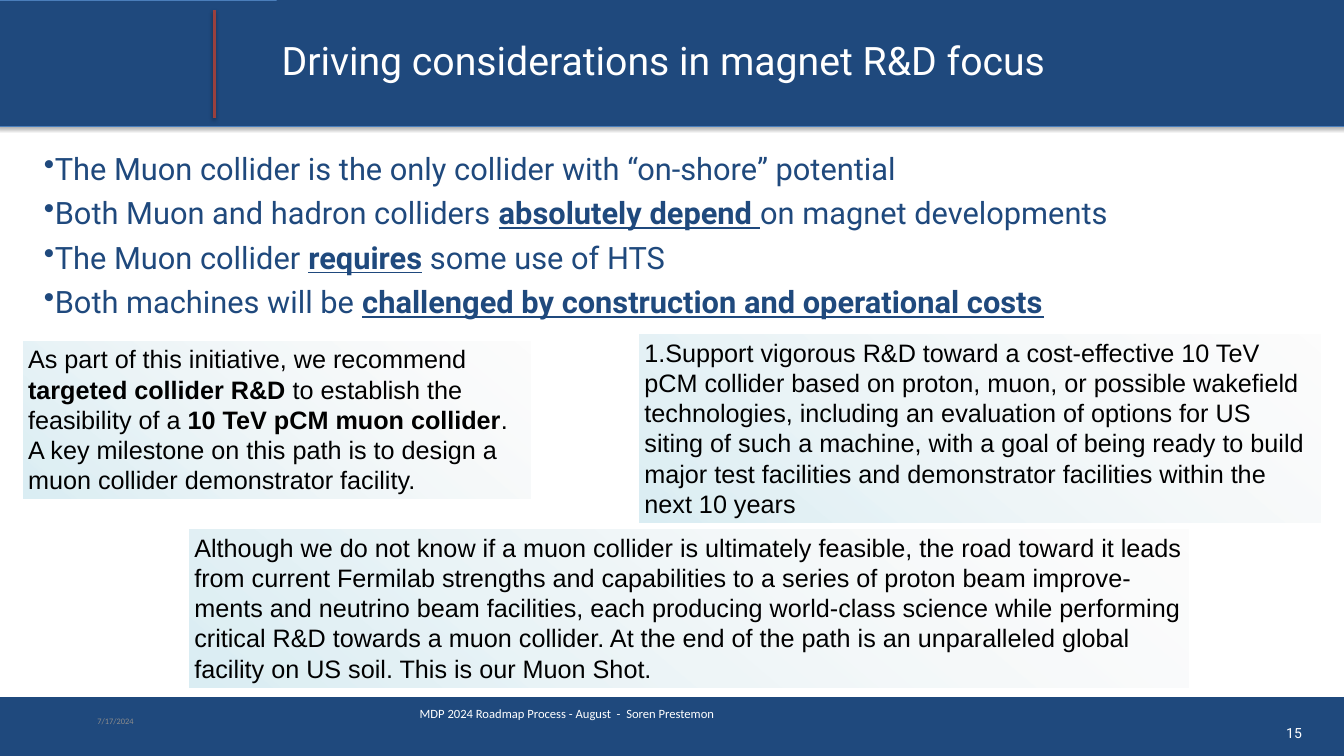
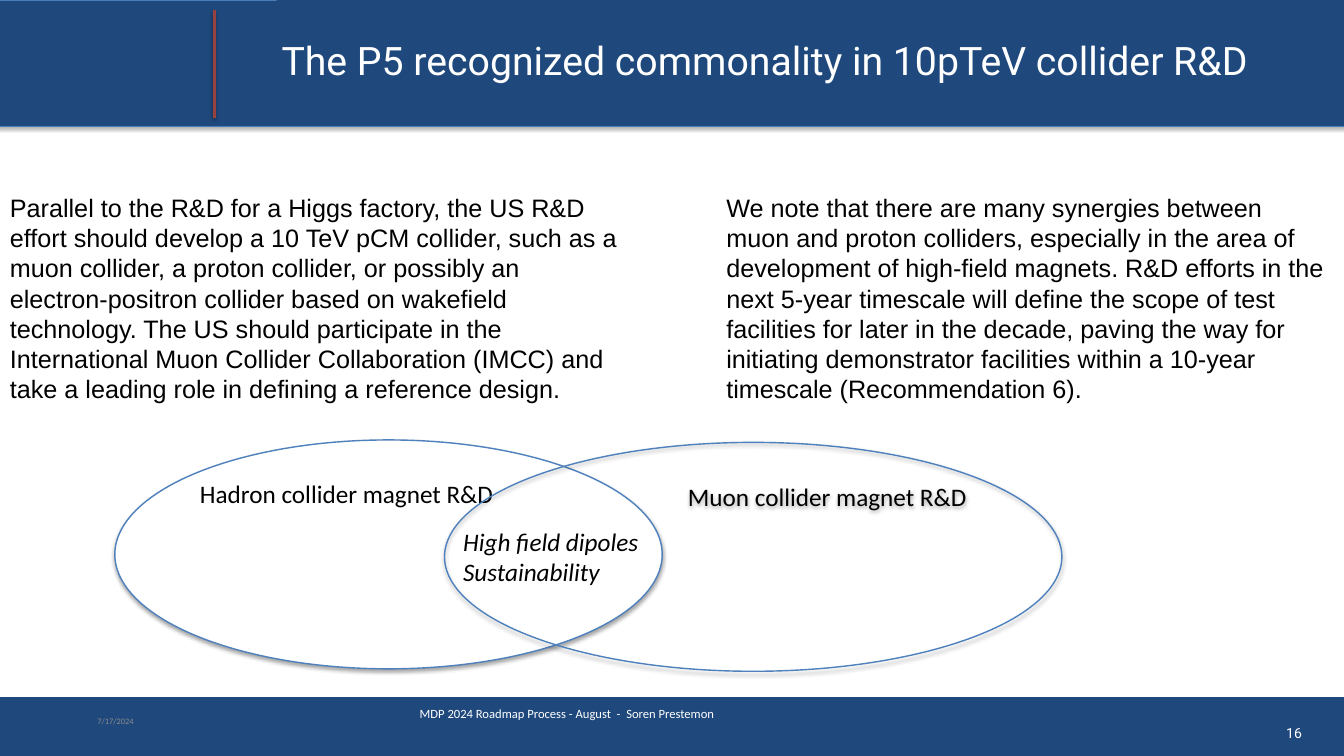
from dataclasses import dataclass

from lxml import etree
from pptx import Presentation
from pptx.dml.color import RGBColor
from pptx.enum import shapes, text
from pptx.oxml import ns
from pptx.util import Pt


@dataclass(frozen=True)
class Theme:
    navy: str = "1F497D"
    band_edge: str = "4A7EBB"
    divider: str = "9A403E"
    ellipse_edge: str = "4F81BD"
    white: str = "FFFFFF"
    black: str = "000000"
    gray: str = "8C8C8C"
    quote_light: str = "F7F7F7"
    quote_blue: str = "DBEEF4"
    heading_font: str = "Roboto"
    quote_font: str = "Arial"
    label_font: str = "Calibri"
    title_size: int = 56
    bullet_size: int = 44
    quote_size: int = 36
    page_size: int = 20
    footer_size: int = 18
    date_size: int = 12


THEME = Theme()
TIGHT = (7.2, 3.6, 7.2, 3.6)
EVEN = (7.2, 7.2, 7.2, 7.2)
TOP = text.MSO_ANCHOR.TOP
MIDDLE = text.MSO_ANCHOR.MIDDLE
LEFT = text.PP_ALIGN.LEFT
RIGHT = text.PP_ALIGN.RIGHT
RECTANGLE = shapes.MSO_SHAPE.RECTANGLE
OVAL = shapes.MSO_SHAPE.OVAL


def rgb(color):
    return RGBColor.from_string(color)


def set_shadow(shape, opacity):
    effects = etree.SubElement(shape.element.spPr, ns.qn("a:effectLst"))
    if opacity:
        shadow = etree.SubElement(
            effects, ns.qn("a:outerShdw"), blurRad=str(Pt(6)), dist=str(Pt(3)),
            dir="5400000", rotWithShape="0")
        color = etree.SubElement(shadow, ns.qn("a:srgbClr"), val=THEME.black)
        etree.SubElement(color, ns.qn("a:alpha"), val=str(opacity * 1000))


def add_panel(slide, kind, box, fill=None, line=None, line_width=1, shadow=0):
    shape = slide.shapes.add_shape(kind, *map(Pt, box))
    if fill:
        shape.fill.solid()
        shape.fill.fore_color.rgb = rgb(fill)
    else:
        shape.fill.background()
    if line:
        shape.line.color.rgb = rgb(line)
        shape.line.width = Pt(line_width)
    else:
        shape.line.fill.background()
    set_shadow(shape, shadow)
    return shape


def add_marker(paragraph, tag, indent=0, **attributes):
    properties = paragraph._p.get_or_add_pPr()
    properties.set("marL", str(Pt(indent)))
    properties.set("indent", str(-Pt(indent)))
    etree.SubElement(properties, ns.qn(tag), **attributes)


def write(shape, lines, font, size, color, inset=TIGHT, anchor=TOP, align=LEFT,
          wrap=True, space=0, marker=None, underline=False, italic=False):
    frame = shape.text_frame
    frame.word_wrap = wrap
    frame.auto_size = text.MSO_AUTO_SIZE.NONE
    frame.vertical_anchor = anchor
    (frame.margin_left, frame.margin_top,
     frame.margin_right, frame.margin_bottom) = map(Pt, inset)
    for index, line in enumerate(lines):
        paragraph = frame.add_paragraph() if index else frame.paragraphs[0]
        paragraph.alignment = align
        if index and space:
            paragraph.space_before = Pt(space)
        if marker:
            add_marker(paragraph, **marker)
        paragraph.font.name = font
        paragraph.font.size = Pt(size)
        paragraph.font.color.rgb = rgb(color)
        if italic:
            paragraph.font.italic = True
        for position, words in enumerate(line.split("*")):
            if words:
                run = paragraph.add_run()
                run.text = words
                if position % 2:
                    run.font.bold = True
                    run.font.underline = underline or None


def add_text(slide, box, lines, font, size, color, **style):
    shape = slide.shapes.add_textbox(*map(Pt, box))
    write(shape, lines, font, size, color, **style)


def add_quote(slide, box, quote, shaded=False, **style):
    shape = add_panel(slide, RECTANGLE, box)
    if shaded:
        shape.fill.gradient()
        shape.fill.gradient_angle = 230
        for stop, color, position in zip(
                shape.fill.gradient_stops, (THEME.quote_light, THEME.quote_blue), (0, 1)):
            stop.color.rgb = rgb(color)
            stop.position = position
        light = shape.element.spPr.find(".//" + ns.qn("a:srgbClr"))
        etree.SubElement(light, ns.qn("a:alpha"), val="32000")
    write(shape, [quote], THEME.quote_font, THEME.quote_size, THEME.black, **style)


def add_ellipse(slide, box, label, align, fill=None):
    shape = add_panel(slide, OVAL, box, fill, THEME.ellipse_edge, 2, shadow=35)
    write(shape, [label], THEME.label_font, THEME.quote_size, THEME.black,
          inset=EVEN, align=align)


def add_bands(slide, layout):
    footer_band = add_panel(slide, RECTANGLE, (-3, 996, 1925, 86), THEME.navy)
    title_band = add_panel(slide, RECTANGLE, (-5, 0, 1929, 180), THEME.navy,
                           THEME.band_edge, shadow=35)
    divider = slide.shapes.add_connector(
        shapes.MSO_CONNECTOR.STRAIGHT, Pt(306), Pt(168), Pt(306), Pt(14.4))
    divider.line.color.rgb = rgb(THEME.divider)
    divider.line.width = Pt(4)
    set_shadow(divider, 38)
    for shape in (footer_band, title_band, divider):
        layout.shapes.element.append(shape.element)


def prepare_layout(presentation):
    layout = presentation.slide_layouts.get_by_name("Title Only")
    for placeholder in list(layout.placeholders):
        if placeholder.placeholder_format.type != shapes.PP_PLACEHOLDER.TITLE:
            layout.shapes.element.remove(placeholder.element)
    return layout


def add_slide(presentation, layout, heading, number):
    slide = presentation.slides.add_slide(layout)
    title = slide.shapes.title
    title.left, title.top, title.width, title.height = map(Pt, (395, -2, 1527, 174))
    title.fill.solid()
    title.fill.fore_color.rgb = rgb(THEME.navy)
    write(title, [heading], THEME.heading_font, THEME.title_size, THEME.white,
          inset=EVEN, anchor=MIDDLE)
    add_text(slide, (132, 1001, 432, 58), ["7/17/2024"], THEME.label_font,
             THEME.date_size, THEME.gray, anchor=MIDDLE)
    add_text(slide, (592.5, 1001, 1106, 58),
             ["MDP 2024 Roadmap Process - August\u00a0 -\u00a0 Soren Prestemon".replace("\u00a0", " ")],
             THEME.label_font, THEME.footer_size, THEME.white, inset=(7.2, 7.2, 7.2, 3.6))
    add_text(slide, (1829, 1028, 38, 37), [str(number)], THEME.heading_font,
             THEME.page_size, THEME.white, inset=EVEN, anchor=MIDDLE,
             align=RIGHT, wrap=False)
    return slide


def fill_considerations(slide):
    add_text(slide, (55.5, 206, 1754, 713), [
        "The Muon collider is the only collider with “on-shore” potential",
        "Both Muon and hadron colliders *absolutely depend *on magnet developments",
        "The Muon collider *requires* some use of HTS",
        "Both machines will be *challenged by construction and operational costs*",
    ], THEME.heading_font, THEME.bullet_size, THEME.navy, inset=EVEN, space=11,
        marker={"tag": "a:buChar", "indent": 8, "char": "•"}, underline=True)
    add_quote(slide, (33, 487.5, 725, 225),
              "As part of this initiative, we recommend *targeted collider R&D *to establish "
              "the feasibility of a *10 TeV pCM muon collider*. A key milestone on this path "
              "is to design a muon collider demonstrator facility.", shaded=True)
    add_quote(slide, (913.5, 478, 973.5, 269),
              "Support vigorous R&D toward a cost-effective 10 TeV pCM collider based on "
              "proton, muon, or possible wakefield technologies, including an evaluation of "
              "options for US siting of such a machine, with a goal of being ready to build "
              "major test facilities and demonstrator facilities within the next 10 years",
              shaded=True, marker={"tag": "a:buAutoNum", "type": "arabicPeriod"})
    add_quote(slide, (270.5, 756.5, 1427, 225),
              "Although we do not know if a muon collider is ultimately feasible, the road "
              "toward it leads from current Fermilab strengths and capabilities to a series of "
              "proton beam improve- ments and neutrino beam facilities, each producing "
              "world-class science while performing critical R&D towards a muon collider. At "
              "the end of the path is an unparalleled global facility on US soil. This is our "
              "Muon Shot.", shaded=True)


def fill_commonality(slide):
    add_quote(slide, (1030.5, 271, 875, 316),
              "We note that there are many synergies between muon and proton colliders, "
              "especially in the area of development of high-field magnets. R&D efforts in the "
              "next 5-year timescale will define the scope of test facilities for later in the "
              "decade, paving the way for initiating demonstrator facilities within a 10-year "
              "timescale (Recommendation 6).")
    add_quote(slide, (7, 271, 882, 312.5),
              "Parallel to the R&D for a Higgs factory, the US R&D effort should develop a "
              "10 TeV pCM collider, such as a muon collider, a proton collider, or possibly an "
              "electron-positron collider based on wakefield technology. The US should "
              "participate in the International Muon Collider Collaboration (IMCC) and take a "
              "leading role in defining a reference design.")
    add_ellipse(slide, (164, 628.5, 782, 327), "Hadron collider magnet R&D", LEFT, THEME.white)
    add_ellipse(slide, (635, 632, 882, 327), "Muon collider magnet R&D", RIGHT)
    add_text(slide, (654.5, 745, 276, 101.5), ["High field dipoles", "Sustainability"],
             THEME.label_font, THEME.quote_size, THEME.black, inset=EVEN, italic=True)


def main():
    presentation = Presentation()
    presentation.slide_width, presentation.slide_height = Pt(1920), Pt(1080)
    layout = prepare_layout(presentation)
    considerations = add_slide(
        presentation, layout, "Driving considerations in magnet R&D focus", 15)
    add_bands(considerations, layout)
    fill_considerations(considerations)
    commonality = add_slide(
        presentation, layout, "The P5 recognized commonality in 10pTeV collider R&D", 16)
    fill_commonality(commonality)
    presentation.save("out.pptx")


if __name__ == "__main__":
    main()
